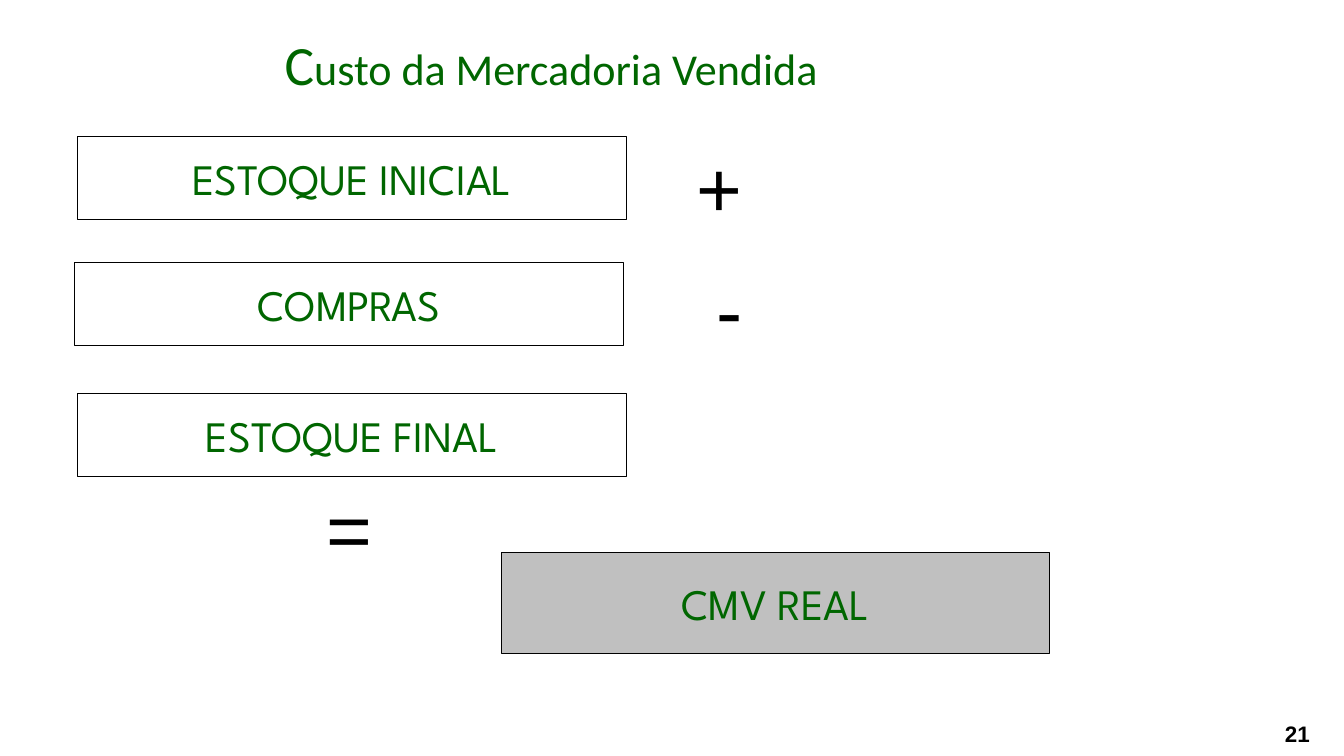
from pptx import Presentation
from pptx.dml.color import RGBColor
from pptx.enum.shapes import MSO_SHAPE as Shape
from pptx.enum.text import MSO_ANCHOR as Anchor, MSO_AUTO_SIZE as AutoSize, PP_ALIGN as Align
from pptx.util import Inches, Pt

COLORS = {"green": "006600", "black": "000000", "gray": "C0C0C0"}


def color(name):
    """Return the named colour."""
    return RGBColor.from_string(COLORS[name])


def add_run(paragraph, text, size, font, ink, bold=False):
    """Append one formatted run to a paragraph."""
    run = paragraph.add_run()
    run.text = text
    run.font.size = Pt(size)
    run.font.name = font
    run.font.bold = bold
    run.font.color.rgb = color(ink)


def set_insets(frame):
    """Give a text frame the margins shared by all boxes."""
    frame.margin_left = frame.margin_right = Inches(0.12)
    frame.margin_top = frame.margin_bottom = Inches(0.06)


def format_title(title):
    """Place the title and write it with a larger initial."""
    title.left, title.top = Inches(0.72), Inches(0.29)
    title.width, title.height = Inches(9.49), Inches(0.75)
    frame = title.text_frame
    frame.vertical_anchor = Anchor.MIDDLE
    frame.auto_size = AutoSize.NONE
    heading = frame.paragraphs[0]
    heading.alignment = Align.CENTER
    heading.line_spacing = 0.9
    add_run(heading, "C", 39.6, "Calibri", "green")
    add_run(heading, "usto da Mercadoria Vendida", 31.5, "Calibri", "green")


def add_term(slide, text, left, top, height=0.83, fill=None):
    """Add one outlined box holding a term of the formula."""
    term = slide.shapes.add_shape(
        Shape.RECTANGLE, Inches(left), Inches(top), Inches(5.44), Inches(height))
    term.shadow.inherit = False
    if fill:
        term.fill.solid()
        term.fill.fore_color.rgb = color(fill)
    else:
        term.fill.background()
    term.line.color.rgb = color("black")
    term.line.width = Pt(0.75)
    frame = term.text_frame
    set_insets(frame)
    frame.word_wrap = False
    frame.vertical_anchor = Anchor.MIDDLE
    label = frame.paragraphs[0]
    label.alignment = Align.CENTER
    add_run(label, text, 31, "League Spartan", "green")


def add_label(slide, left, top, width, height):
    """Add a wrapping text box and return its first paragraph."""
    label = slide.shapes.add_textbox(
        Inches(left), Inches(top), Inches(width), Inches(height))
    label.text_frame.word_wrap = True
    set_insets(label.text_frame)
    return label.text_frame.paragraphs[0]


def add_operator(slide, sign, left, top, width):
    """Add one large arithmetic sign."""
    operator = add_label(slide, left, top, width, 1.06)
    operator.space_before = Pt(7)
    add_run(operator, sign, 56, "Arial", "black")


def add_page_number(slide, number):
    """Add the page number at the lower right."""
    page = add_label(slide, 10.33, 7.08, 2.78, 0.33)
    page.alignment = Align.RIGHT
    add_run(page, number, 16, "Arial", "black", bold=True)


def main():
    """Build the slide and save it."""
    deck = Presentation()
    deck.slide_width, deck.slide_height = Inches(13.33), Inches(7.5)
    slide = deck.slides.add_slide(deck.slide_layouts[5])
    format_title(slide.shapes.title)
    add_term(slide, "ESTOQUE INICIAL", 0.77, 1.35)
    add_term(slide, "COMPRAS", 0.74, 2.6)
    add_term(slide, "ESTOQUE FINAL", 0.77, 3.9)
    add_term(slide, "CMV REAL", 4.97, 5.48, height=1, fill="gray")
    add_operator(slide, "+", 6.79, 1.32, 1.22)
    add_operator(slide, "=", 3.12, 4.7, 1.33)
    add_operator(slide, "-", 6.99, 2.53, 1.11)
    add_page_number(slide, "21")
    deck.save("out.pptx")


if __name__ == "__main__":
    main()
